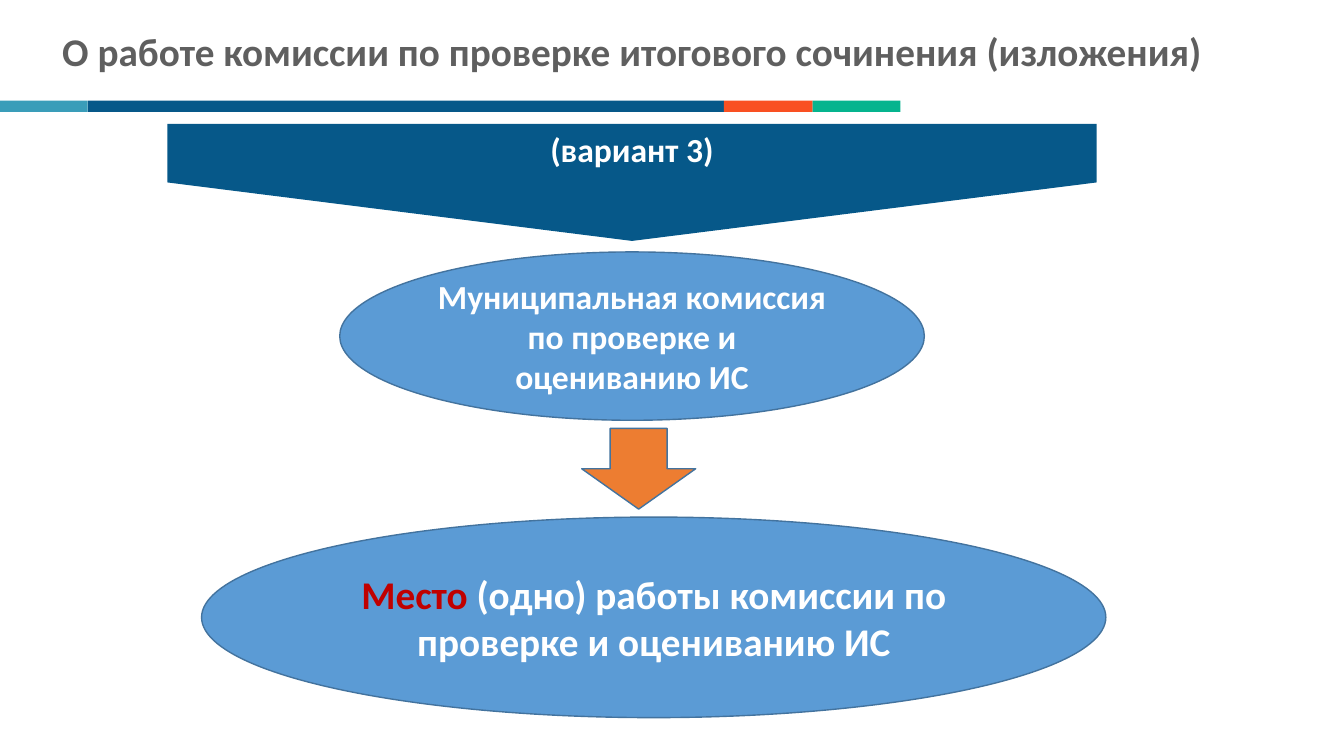
"""Build a slide on the work of the commission that checks the final essay."""
import dataclasses
import itertools
import typing

import pptx
import pptx.dml.color
import pptx.enum.shapes
import pptx.enum.text
import pptx.util

MSO = pptx.enum.shapes.MSO_SHAPE
ANCHOR = pptx.enum.text.MSO_ANCHOR
WHITE, NAVY, BLUE, OUTLINE = "FFFFFF", "065889", "5B9BD5", "43739E"
COLUMNS = ROWS = 100

prs = pptx.Presentation()
prs.slide_width = pptx.util.Inches(13.33)
prs.slide_height = pptx.util.Inches(7.5)


class Box(typing.NamedTuple):
    col: float
    row: float
    cols: float
    rows: float


class Run(typing.NamedTuple):
    text: str
    size: float
    color: str = WHITE


@dataclasses.dataclass
class Block:
    kind: MSO
    box: Box
    fill: str
    line: str = ""
    runs: tuple[Run, ...] = ()
    anchor: ANCHOR = ANCHOR.MIDDLE
    turned: bool = False


def rgb(color: str) -> pptx.dml.color.RGBColor:
    return pptx.dml.color.RGBColor.from_string(color)


def place(sp, box: Box) -> None:
    sp.left = int(prs.slide_width * box.col / COLUMNS)
    sp.top = int(prs.slide_height * box.row / ROWS)
    sp.width = int(prs.slide_width * box.cols / COLUMNS)
    sp.height = int(prs.slide_height * box.rows / ROWS)


def turn_down(sp) -> None:
    shift = (sp.width - sp.height) // 2
    sp.left, sp.top = sp.left + shift, sp.top - shift
    sp.width, sp.height = sp.height, sp.width
    sp.rotation = 90
    sp.text_frame._txBody.bodyPr.set("vert", "vert270")


def write(tf, runs: tuple[Run, ...], anchor: ANCHOR) -> None:
    tf.word_wrap = True
    tf.vertical_anchor = anchor
    p = tf.paragraphs[0]
    p.alignment = pptx.enum.text.PP_ALIGN.CENTER
    for run in runs:
        r = p.add_run()
        r.text = run.text
        r.font.name = "Calibri"
        r.font.size = pptx.util.Pt(run.size)
        r.font.bold = True
        r.font.color.rgb = rgb(run.color)


def draw(s, block: Block) -> None:
    sp = s.shapes.add_shape(block.kind, 0, 0, 0, 0)
    place(sp, block.box)
    sp.shadow.inherit = False
    sp.fill.solid()
    sp.fill.fore_color.rgb = rgb(block.fill)
    if block.line:
        sp.line.color.rgb = rgb(block.line)
        sp.line.width = pptx.util.Pt(1)
    else:
        sp.line.fill.background()
    if block.turned:
        turn_down(sp)
    if block.runs:
        write(sp.text_frame, block.runs, block.anchor)


def strip() -> list[Block]:
    widths = (6.53, 47.33, 6.6, 6.53)
    colors = ("3A9DB9", NAVY, "F95022", "05B48E")
    starts = itertools.accumulate(widths, initial=0)
    return [Block(MSO.RECTANGLE, Box(col, 13.33, cols, 1.47), color)
            for col, cols, color in zip(starts, widths, colors)]


FLOW = [
    Block(MSO.PENTAGON, Box(12.45, 16.4, 69.15, 15.47), NAVY,
          runs=(Run("(вариант 3)", 24),), anchor=ANCHOR.TOP, turned=True),
    Block(MSO.OVAL, Box(25.28, 33.33, 43.5, 22.27), BLUE, OUTLINE,
          (Run("Муниципальная комиссия по проверке и оцениванию ИС", 24),)),
    Block(MSO.OVAL, Box(15, 68.4, 67.28, 26.53), BLUE, OUTLINE,
          (Run("Место", 28, "C00000"),
           Run(" (одно) работы комиссии по проверке и оцениванию ИС", 28))),
    Block(MSO.DOWN_ARROW, Box(43.28, 56.67, 8.48, 10.67), "ED7D31", OUTLINE),
]


def main() -> None:
    s = prs.slides.add_slide(prs.slide_layouts.get_by_name("Title Only"))
    title = s.shapes.title
    place(title, Box(3.38, 2.93, 87.23, 7.6))
    heading = "О работе комиссии по проверке итогового сочинения (изложения)"
    write(title.text_frame, (Run(heading, 28, "5F5F5F"),), ANCHOR.TOP)
    title.text_frame.auto_size = pptx.enum.text.MSO_AUTO_SIZE.SHAPE_TO_FIT_TEXT
    for block in strip() + FLOW:
        draw(s, block)
    prs.save("out.pptx")


if __name__ == "__main__":
    main()
